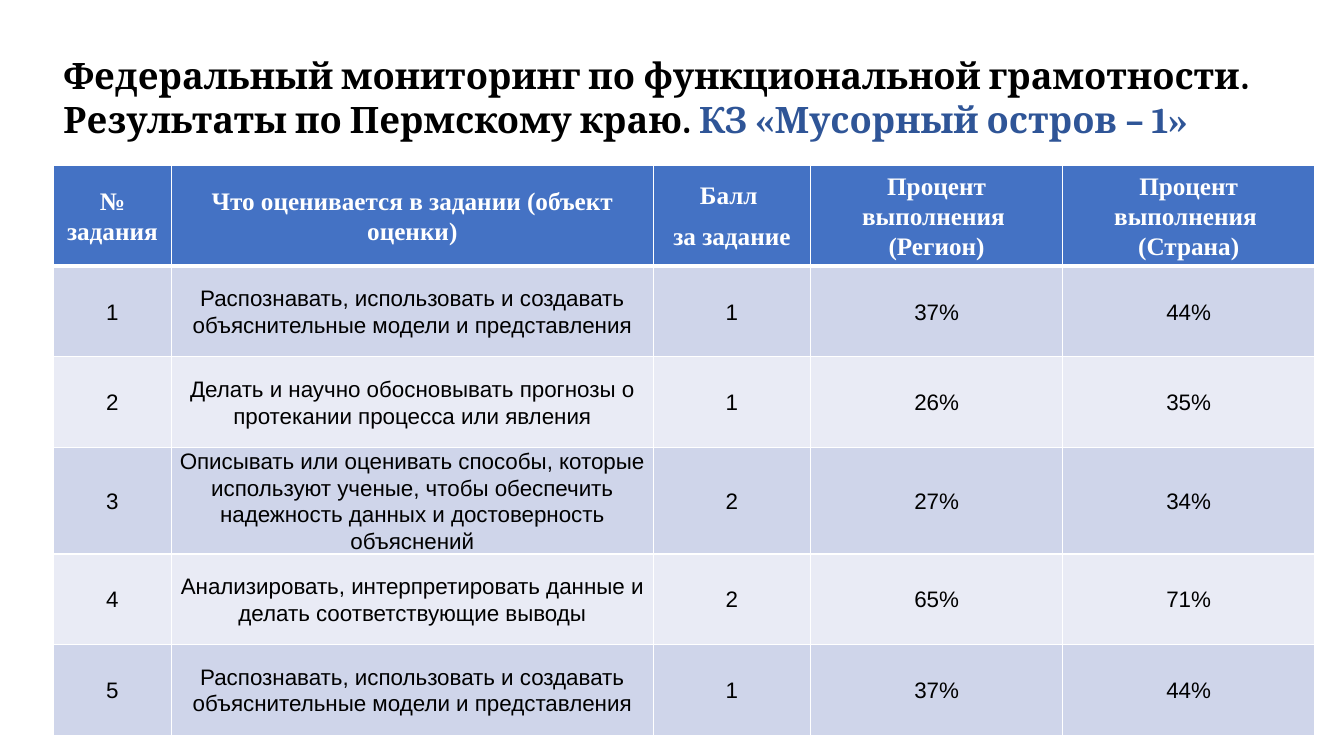
import pptx
import pptx.util
import pptx.dml.color
import pptx.enum.text
import pptx.oxml
import pptx.oxml.ns
from dataclasses import dataclass

Inches = pptx.util.Inches
Align = pptx.enum.text.PP_ALIGN
Anchor = pptx.enum.text.MSO_ANCHOR


@dataclass(frozen=True)
class Theme:
    black: str = "000000"
    white: str = "FFFFFF"
    accent: str = "2F5597"
    head: str = "4472C4"
    bands: tuple = ("CFD5EA", "E9EBF5")
    title: tuple = ("Cambria", 26, True)
    label: tuple = ("Times New Roman", 18, True)
    body: tuple = ("Arial", 16, False)
    thin: int = 1
    thick: int = 3


def apply(item, values):
    for name, value in values.items():
        setattr(item, name, value)


def style(run, face, color):
    name, size, bold = face
    apply(run.font, {"name": name, "size": pptx.util.Pt(size), "bold": bold})
    run.font.color.rgb = pptx.dml.color.RGBColor.from_string(color)


class Page:
    def __init__(self, deck, theme):
        self.theme = theme
        self.slide = deck.slides.add_slide(deck.slide_layouts[6])

    def title(self, box, parts):
        frame = self.slide.shapes.add_textbox(*map(Inches, box)).text_frame
        apply(frame, {"word_wrap": True,
                      "auto_size": pptx.enum.text.MSO_AUTO_SIZE.SHAPE_TO_FIT_TEXT})
        for text, color in parts:
            run = frame.paragraphs[0].add_run()
            run.text = text
            style(run, self.theme.title, color)

    def border(self, cell, sides):
        props = cell._tc.get_or_add_tcPr()
        for side, width in sides.items():
            props.append(pptx.oxml.parse_xml(
                f'<a:ln{side} {pptx.oxml.ns.nsdecls("a")} w="{pptx.util.Pt(width)}">'
                f'<a:solidFill><a:srgbClr val="{self.theme.white}"/></a:solidFill>'
                f'</a:ln{side}>'))

    def cell(self, cell, text, face, color, fill, sides):
        self.border(cell, sides)
        cell.fill.solid()
        cell.fill.fore_color.rgb = pptx.dml.color.RGBColor.from_string(fill)
        apply(cell, {"vertical_anchor": Anchor.MIDDLE,
                     "margin_left": Inches(0.07), "margin_right": Inches(0.07),
                     "margin_top": 0, "margin_bottom": 0})
        cell.text = text
        for para in cell.text_frame.paragraphs:
            apply(para, {"alignment": Align.CENTER, "line_spacing": 1.07,
                         "space_after": pptx.util.Pt(8)})
            for run in para.runs:
                style(run, face, color)

    def table(self, box, widths, heights, rows):
        look = self.theme
        grid = self.slide.shapes.add_table(
            len(rows), len(widths), *map(Inches, box)).table
        for col, width in zip(grid.columns, widths):
            col.width = Inches(width)
        for row, height in zip(grid.rows, heights):
            row.height = Inches(height)
        for r, row in enumerate(rows):
            # Header row is dark, the rest alternate between two bands
            if r == 0:
                face, color, fill = look.label, look.white, look.head
            else:
                face, color, fill = look.body, look.black, look.bands[(r - 1) % 2]
            sides = {"L": look.thin, "R": look.thin,
                     "T": look.thick if r == 1 else look.thin,
                     "B": look.thick if r == 0 else look.thin}
            for c, text in enumerate(row):
                self.cell(grid.cell(r, c), text, face, color, fill, sides)


HEADS = ("№ задания", "Что оценивается в задании (объект оценки)",
         "Балл \nза задание", "Процент выполнения \v(Регион)",
         "Процент выполнения \v(Страна)")
MODELS = "Распознавать, использовать и создавать объяснительные модели и представления"
TASKS = (
    (MODELS, 1, 37, 44),
    ("Делать и научно обосновывать прогнозы о протекании процесса или явления",
     1, 26, 35),
    ("Описывать или оценивать способы, которые используют ученые, чтобы "
     "обеспечить надежность данных и достоверность объяснений", 2, 27, 34),
    ("Анализировать, интерпретировать данные и делать соответствующие выводы",
     2, 65, 71),
    (MODELS, 1, 37, 44),
)


def main():
    deck = pptx.Presentation()
    apply(deck, {"slide_width": Inches(13.33), "slide_height": Inches(7.5)})
    theme = Theme()
    page = Page(deck, theme)

    # Task results
    rows = [HEADS] + [
        (str(n), skill, str(score), f"{region}%", f"{nation}%")
        for n, (skill, score, region, nation) in enumerate(TASKS, 1)]
    page.table((0.53, 1.64, 12.51, 5.5), (1.17, 4.78, 1.56, 2.5, 2.5),
               [1] + [0.9] * len(TASKS), rows)

    # Slide title
    page.title((0.53, 0.48, 12.51, 0.98), (
        ("Федеральный мониторинг по функциональной грамотности. "
         "Результаты по Пермскому краю. ", theme.black),
        ("КЗ «Мусорный остров – 1»", theme.accent)))

    deck.save("out.pptx")


if __name__ == "__main__":
    main()
